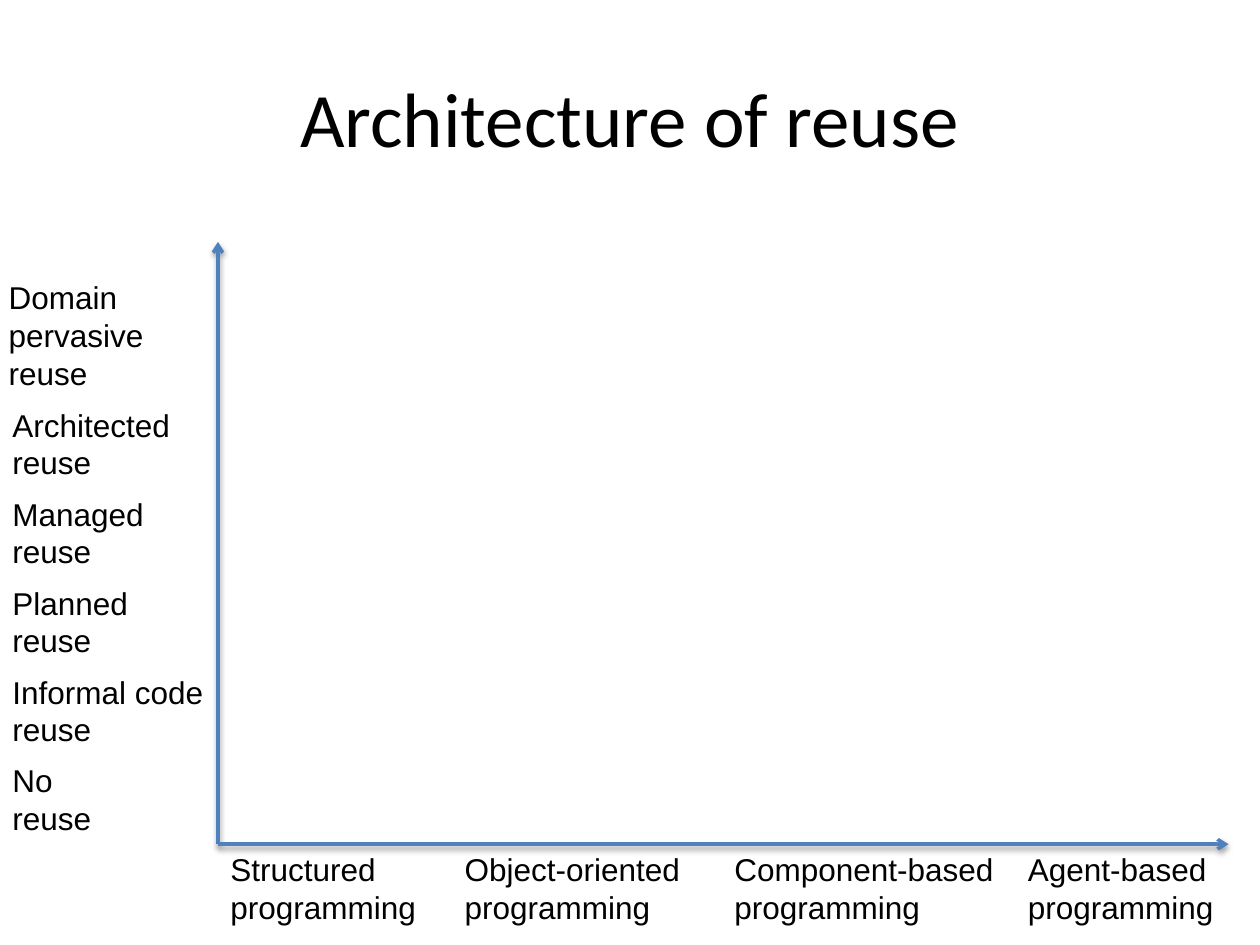
from dataclasses import dataclass

from lxml.etree import SubElement
from pptx import Presentation
from pptx.dml.color import RGBColor
from pptx.enum.shapes import MSO_CONNECTOR as Connector
from pptx.enum.text import MSO_ANCHOR as Anchor, MSO_AUTO_SIZE as AutoSize, PP_ALIGN as Align
from pptx.oxml.ns import qn
from pptx.util import Inches, Pt


@dataclass(frozen=True)
class Theme:
    text: RGBColor = RGBColor(0x00, 0x00, 0x00)
    axis: RGBColor = RGBColor(0x4F, 0x81, 0xBD)
    background: RGBColor = RGBColor(0xFF, 0xFF, 0xFF)
    title_font: str = "Calibri"
    label_font: str = "Arial"
    title_size: int = 44
    label_size: int = 18
    axis_width: int = 2


class SlideBuilder:
    def __init__(self, deck, theme):
        self.theme = theme
        self.page = deck.slides.add_slide(deck.slide_layouts[5])
        self.page.background.fill.solid()
        self.page.background.fill.fore_color.rgb = theme.background

    def add_span(self, para, text, font, size):
        span = para.add_run()
        span.text = text
        span.font.name = font
        span.font.size = Pt(size)
        span.font.color.rgb = self.theme.text

    def title(self, text, left, top, width, height):
        box = self.page.shapes.title
        box.left, box.top = Inches(left), Inches(top)
        box.width, box.height = Inches(width), Inches(height)
        box.text_frame.vertical_anchor = Anchor.MIDDLE
        para = box.text_frame.paragraphs[0]
        para.alignment = Align.CENTER
        self.add_span(para, text, self.theme.title_font, self.theme.title_size)

    def label(self, lines, left, top, width, height, wrap=False):
        box = self.page.shapes.add_textbox(
            Inches(left), Inches(top), Inches(width), Inches(height))
        frame = box.text_frame
        frame.word_wrap = wrap
        frame.auto_size = AutoSize.SHAPE_TO_FIT_TEXT
        for index, line in enumerate(lines):
            para = frame.add_paragraph() if index else frame.paragraphs[0]
            self.add_span(para, line, self.theme.label_font, self.theme.label_size)

    def axis(self, start, end):
        arrow = self.page.shapes.add_connector(
            Connector.STRAIGHT, *(Inches(value) for value in (*start, *end)))
        arrow.line.color.rgb = self.theme.axis
        arrow.line.width = Pt(self.theme.axis_width)
        properties = arrow.element.spPr
        SubElement(properties.get_or_add_ln(), qn("a:tailEnd"), type="arrow")
        effects = SubElement(properties, qn("a:effectLst"))
        shadow = SubElement(effects, qn("a:outerShdw"), blurRad=str(Pt(3.1)),
                            dist=str(Pt(1.6)), dir="5400000", rotWithShape="0")
        color = SubElement(shadow, qn("a:srgbClr"), val="000000")
        SubElement(color, qn("a:alpha"), val="38000")


def main():
    deck = Presentation()
    deck.slide_width, deck.slide_height = Inches(10), Inches(7.5)
    slide = SlideBuilder(deck, Theme())
    slide.title("Architecture of reuse", 0.5, 0.3, 9, 1.25)

    origin_x, origin_y = 1.73, 6.7
    label_height = 0.71
    paradigms = [
        ("Structured", origin_x, 1.69, False),
        ("Object-oriented", 3.59, 2.14, True),
        ("Component-based", 5.73, 2.33, True),
        ("Agent-based", 8.06, 2.33, True),
    ]
    for name, left, width, wrap in paradigms:
        slide.label([name, "programming"], left, origin_y, width, label_height, wrap)

    reuse_levels = [
        ("No", 0.86),
        ("Informal code", 1.73),
        ("Planned", 1.13),
        ("Managed", 1.25),
        ("Architected", 1.46),
    ]
    top_level = 3.17
    pitch = (origin_y - top_level) / len(reuse_levels)
    for step, (name, width) in enumerate(reuse_levels, 1):
        slide.label([name, "reuse"], 0, origin_y - step * pitch, width, label_height)
    slide.label(["Domain", "pervasive", "reuse"], -0.03, top_level - 1.01, 1.28, 1.01)

    for end in ((origin_x, 1.92), (9.75, origin_y)):
        slide.axis((origin_x, origin_y), end)

    deck.save("out.pptx")


if __name__ == "__main__":
    main()
